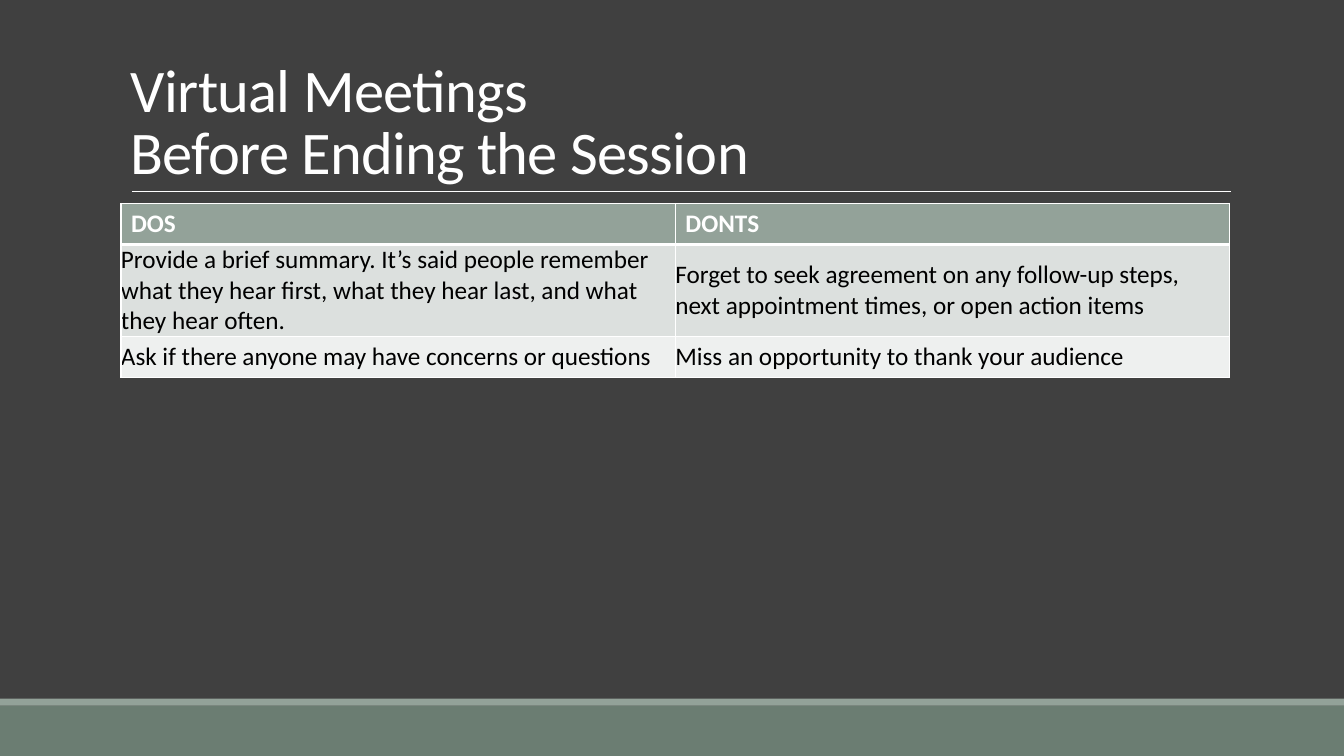
from dataclasses import dataclass

from lxml import etree
from pptx import Presentation
from pptx import util as u
from pptx.dml.color import RGBColor
from pptx.enum import shapes, text
from pptx.oxml import ns


@dataclass(frozen=True)
class Theme:
    font: str = "Calibri"
    background: str = "404040"
    band: str = "6B7D72"
    accent: str = "93A299"
    light: str = "FFFFFF"
    dark: str = "000000"
    row_fills: tuple = ("DCE0DE", "EEF0EF")
    title_size: float = 43.2
    table_size: float = 18
    rule: float = 0.5
    border: float = 1
    header_border: float = 3


def apply(target, values):
    for name, value in values.items():
        setattr(target, name, value)


class Deck:
    """Places elements by percent shares of the slide's width and height."""

    def __init__(self, theme):
        self.theme = theme
        self.prs = Presentation()
        apply(self.prs, {"slide_width": u.Inches(13.33), "slide_height": u.Inches(7.5)})
        self.slide = self.prs.slides.add_slide(self.prs.slide_layouts[6])
        self.paint(self.slide.background, theme.background)

    def x(self, share):
        return round(self.prs.slide_width * share / 100)

    def y(self, share):
        return round(self.prs.slide_height * share / 100)

    def box(self, left, top, width, height):
        return self.x(left), self.y(top), self.x(width), self.y(height)

    def paint(self, target, color):
        target.fill.solid()
        target.fill.fore_color.rgb = RGBColor.from_string(color)

    def set_words(self, frame, words, size, color, bold=False):
        paragraph = frame.paragraphs[0]
        paragraph.text = words
        for run in paragraph.runs:
            apply(run.font, {"name": self.theme.font, "size": u.Pt(size), "bold": bold})
            run.font.color.rgb = RGBColor.from_string(color)
        return paragraph

    def band(self, top, height, color):
        strip = self.slide.shapes.add_shape(
            shapes.MSO_SHAPE.RECTANGLE, *self.box(0, top, 100, height))
        strip.shadow.inherit = False
        self.paint(strip, color)
        strip.line.fill.background()

    def rule(self, left, right, top):
        divider = self.slide.shapes.add_connector(
            shapes.MSO_CONNECTOR.STRAIGHT, self.x(left), self.y(top), self.x(right), self.y(top))
        divider.line.width = u.Pt(self.theme.rule)
        divider.line.color.rgb = RGBColor.from_string(self.theme.light)
        etree.SubElement(divider._element.spPr, ns.qn("a:effectLst"))

    def title(self, words, *area):
        frame = self.slide.shapes.add_textbox(*self.box(*area)).text_frame
        apply(frame, {"word_wrap": True, "vertical_anchor": text.MSO_ANCHOR.BOTTOM})
        heading = self.set_words(frame, words, self.theme.title_size, self.theme.light)
        heading.line_spacing = 0.85
        for run in heading.runs:
            run.font._element.set("spc", "-50")

    def borders(self, cell, widths):
        properties = cell._tc.get_or_add_tcPr()
        for side, width in widths.items():
            edge = etree.SubElement(properties, ns.qn(f"a:ln{side}"), w=str(u.Pt(width)))
            fill = etree.SubElement(edge, ns.qn("a:solidFill"))
            etree.SubElement(fill, ns.qn("a:srgbClr"), val=self.theme.light)

    def table(self, rows, heights, *area):
        theme = self.theme
        advice = self.slide.shapes.add_table(len(rows), len(rows[0]), *self.box(*area)).table
        for r, (row, height) in enumerate(zip(rows, heights)):
            advice.rows[r].height = self.y(height)
            header = r == 0
            widths = dict.fromkeys("LRTB", theme.border)
            if header:
                widths["B"] = theme.header_border
            elif r == 1:
                widths["T"] = theme.header_border
            side, end = (u.Inches(0.1), u.Inches(0.05)) if header else (0, 0)
            layout = {
                "margin_left": side, "margin_right": side,
                "margin_top": end, "margin_bottom": end,
                "vertical_anchor": text.MSO_ANCHOR.TOP if header else text.MSO_ANCHOR.MIDDLE,
            }
            for c, words in enumerate(row):
                cell = advice.cell(r, c)
                apply(cell, layout)
                self.borders(cell, widths)
                self.paint(cell, theme.accent if header else theme.row_fills[(r - 1) % 2])
                self.set_words(cell.text_frame, words, theme.table_size,
                               theme.light if header else theme.dark, header)


def main():
    deck = Deck(Theme())

    # Footer bands
    deck.band(93.33, 6.67, deck.theme.band)
    deck.band(92.4, 0.93, deck.theme.accent)

    # Heading with its divider
    deck.rule(9.82, 91.57, 25.33)
    deck.title("Virtual Meetings\vBefore Ending the Session", 9, 8, 82.5, 17.33)

    # Dos and don'ts
    advice = [
        ("DOS", "DONTS"),
        ("Provide a brief summary. It’s said people remember what they hear first, "
         "what they hear last, and what they hear often.",
         "Forget to seek agreement on any follow-up steps, next appointment times, "
         "or open action items"),
        ("Ask if there anyone may have concerns or questions",
         "Miss an opportunity to thank your audience"),
    ]
    deck.table(advice, (5.4, 12.2, 5.4), 9, 26.93, 82.5, 23)

    deck.prs.save("out.pptx")


if __name__ == "__main__":
    main()
